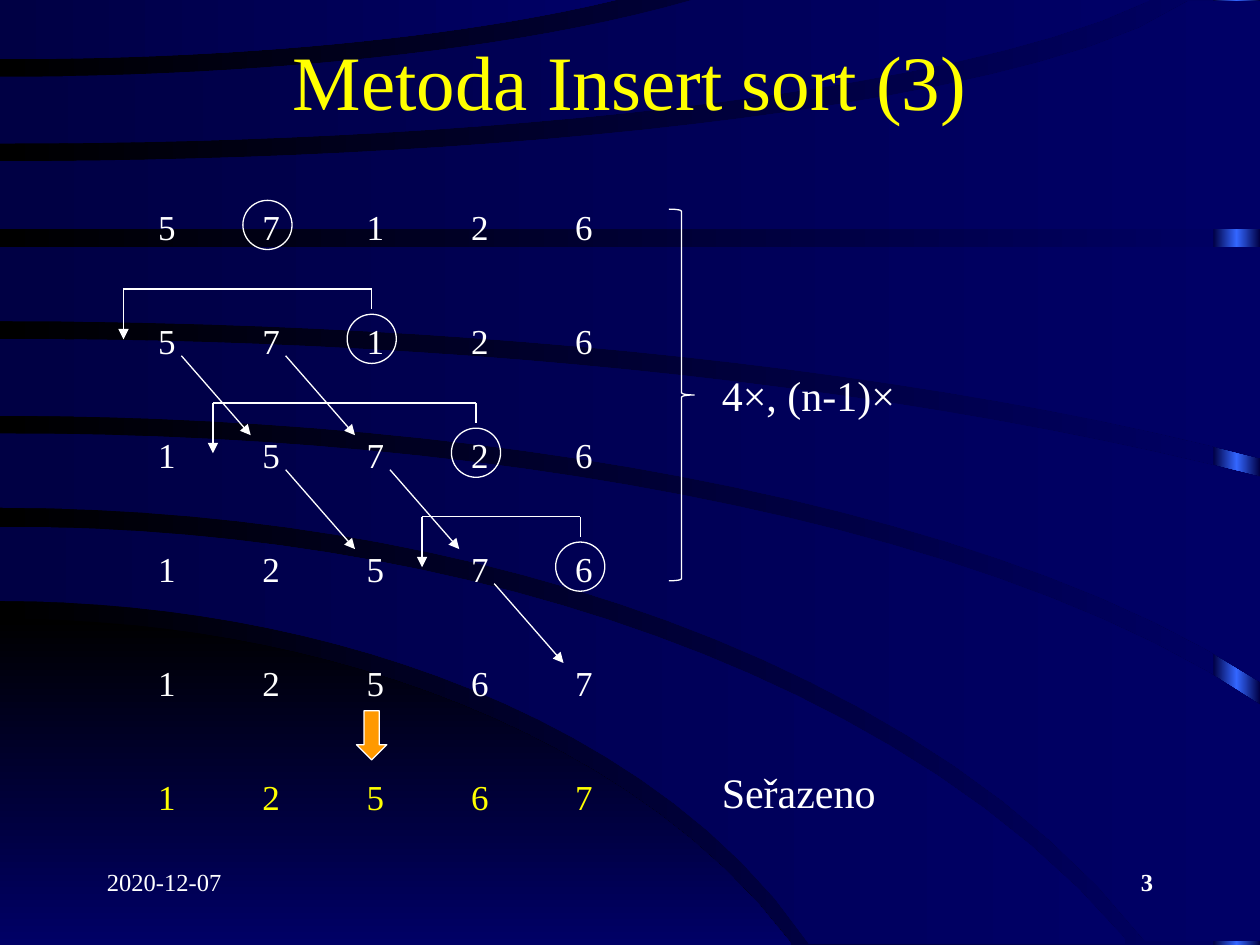
"""Build the slide that traces insert sort on five numbers."""
from copy import deepcopy
from dataclasses import dataclass
from math import sqrt

from lxml.etree import SubElement
from pptx import Presentation
from pptx.dml.color import RGBColor
from pptx.enum.shapes import MSO_CONNECTOR, MSO_SHAPE
from pptx.enum.text import MSO_ANCHOR, PP_ALIGN
from pptx.oxml.ns import qn
from pptx.util import Inches, Pt


@dataclass(frozen=True)
class Theme:
    font: str = "Times New Roman"
    black: str = "000000"
    navy: str = "000044"
    blue: str = "000066"
    bright: str = "3366FF"
    white: str = "FFFFFF"
    yellow: str = "FFFF00"
    orange: str = "FF9900"
    title: int = 44
    label: int = 24
    digit: int = 20
    footer: int = 14
    stroke: float = 0.75


theme = Theme()


def write_text(shape, text, size, color=theme.white, align=PP_ALIGN.LEFT,
               anchor=MSO_ANCHOR.MIDDLE, bold=False, wrap=True):
    frame = shape.text_frame
    frame.word_wrap = wrap
    frame.vertical_anchor = anchor
    para = frame.paragraphs[0]
    para.alignment = align
    span = para.add_run()
    span.text = text
    span.font.name = theme.font
    span.font.size = Pt(size)
    span.font.bold = bold
    span.font.color.rgb = RGBColor.from_string(color)


def color_stops(fill, angle, *colors):
    fill.gradient_angle = angle
    for index, (stop, color) in enumerate(zip(fill.gradient_stops, colors)):
        stop.position = index / (len(colors) - 1)
        stop.color.rgb = RGBColor.from_string(color)


deck = Presentation()
deck.slide_width, deck.slide_height = Inches(10), Inches(7.5)
page = deck.slides.add_slide(deck.slide_layouts[5])
shapes = page.shapes
page.background.fill.gradient()
color_stops(page.background.fill, 0, theme.black, theme.blue)

strip = shapes.add_shape(MSO_SHAPE.RECTANGLE, Inches(9.63), 0, Inches(0.37), Inches(7.5))
strip.shadow.inherit = False
strip.line.fill.background()
strip.fill.gradient()
stop_list = strip._element.spPr.find(qn("a:gradFill")).find(qn("a:gsLst"))
stop_list.insert(1, deepcopy(stop_list[0]))
color_stops(strip.fill, 0, theme.navy, theme.bright, theme.navy)

hill = ((4.91, 7, 4.62, 6.28), (7.5, 7, 0, 6.28))
bands = [
    ((4.18, 10, 5.95, 8.93), (4.77, 7, 4.52, 6.42)),
    ((3.44, 11.2, 3.92, 10), (4.03, 10, 5.9, 9.09)),
    ((2.69, 15, 4.3, 10), (3.3, 11.3, 3.95, 10)),
    ((1.96, 14, 0, 10), (2.55, 14, 3.62, 10)),
    ((1.28, 9.7, -1.66, 9.43), (1.82, 14, 0, 10)),
    ((0.61, 7, -1.6, 5.5), (1.14, 9.7, -1.72, 9.12)),
    ((0, 6.5, 0, 4.9), (0.47, 6.5, -1.38, 4.9)),
]
samples = 24
for edges in [hill, *bands]:
    upper, lower = [
        [(end * step / samples,
          start + rise * (1 - sqrt(1 - (end * step / samples / radius) ** 2)))
         for step in range(samples + 1)]
        for start, radius, rise, end in edges]
    shorter, longer = sorted([upper[-1], lower[-1]])
    outline = [*upper, (longer[0], shorter[1]), *reversed(lower)]
    points = [(Inches(x), Inches(y)) for x, y in outline]
    builder = shapes.build_freeform(*points[0])
    builder.add_line_segments(points[1:], close=True)
    band = builder.convert_to_shape()
    band.shadow.inherit = False
    band.line.fill.background()
    band.fill.gradient()
    if edges is hill:
        color_stops(band.fill, 270, theme.black, theme.blue)
    else:
        color_stops(band.fill, 0, theme.navy, theme.blue)

title = shapes.title
shapes._spTree.append(title._element)
title.left, title.top, title.width, title.height = (
    Inches(0.75), Inches(0.17), Inches(8.5), Inches(0.92))
write_text(title, "Metoda Insert sort (3)", theme.title, color=theme.yellow,
           align=PP_ALIGN.CENTER)

footer = dict(size=theme.footer, anchor=MSO_ANCHOR.TOP)
label = dict(size=theme.label)
for left, top, width, height, text, style in [
    (0.75, 6.83, 2.08, 0.5, "2020-12-07", footer),
    (7.17, 6.83, 2.08, 0.5, "3", dict(footer, align=PP_ALIGN.RIGHT, bold=True)),
    (5.63, 2.92, 1.65, 0.43, "4×, (n-1)×", label),
    (5.63, 6.07, 1.65, 0.43, "Seřazeno", label),
]:
    box = shapes.add_textbox(Inches(left), Inches(top), Inches(width), Inches(height))
    write_text(box, text, **style)

cell_size = 0.39
column_lefts = [1.1 + column * (4.41 - 1.1) / 4 for column in range(5)]
row_tops = [1.59 + row * (6.11 - 1.59) / 5 for row in range(6)]
steps = [("57126", 1), ("57126", 2), ("15726", 3), ("12576", 4), ("12567", None),
         ("12567", None)]
for row, (top, (digits, key_column)) in enumerate(zip(row_tops, steps)):
    for column, (left, digit) in enumerate(zip(column_lefts, digits)):
        cell = shapes.add_shape(MSO_SHAPE.OVAL, Inches(left), Inches(top),
                                Inches(cell_size), Inches(cell_size))
        cell.shadow.inherit = False
        cell.fill.background()
        if column == key_column:
            cell.line.color.rgb = RGBColor.from_string(theme.white)
            cell.line.width = Pt(theme.stroke)
        else:
            cell.line.fill.background()
        frame = cell.text_frame
        frame.margin_left, frame.margin_top = Inches(0.06), Inches(0.03)
        frame.margin_right = frame.margin_bottom = 0
        write_text(cell, digit, theme.digit, align=PP_ALIGN.CENTER, wrap=False,
                   color=theme.yellow if row == len(steps) - 1 else theme.white)

for preset, left, top, width, height, bend in [
    (MSO_SHAPE.DOWN_ARROW, 2.83, 5.64, 0.24, 0.39, 0.5),
    (MSO_SHAPE.RIGHT_BRACE, 5.31, 1.66, 0.2, 2.95, 0.08),
]:
    mark = shapes.add_shape(preset, Inches(left), Inches(top), Inches(width), Inches(height))
    mark.shadow.inherit = False
    mark.line.color.rgb = RGBColor.from_string(theme.white)
    mark.line.width = Pt(theme.stroke)
    mark.adjustments[0] = bend
    if preset == MSO_SHAPE.DOWN_ARROW:
        mark.fill.solid()
        mark.fill.fore_color.rgb = RGBColor.from_string(theme.orange)
    else:
        mark.fill.background()

lines = []
for row, insert_x in [(1, 0.98), (2, 1.69), (3, 3.35)]:
    top = row_tops[row]
    key_x = column_lefts[steps[row][1]] + cell_size / 2
    lines += [(key_x, top - 0.2, key_x, top - 0.04, False),
              (insert_x, top - 0.2, insert_x, top + 0.2, True),
              (insert_x, top - 0.2, key_x, top - 0.2, False)]
for row, column in [(1, 0), (1, 1), (2, 1), (2, 2), (3, 3)]:
    left, top = column_lefts[column], row_tops[row]
    lines.append((left + 0.34, top + 0.33, left + 0.89, top + 0.96, True))

for x1, y1, x2, y2, has_arrow in lines:
    line = shapes.add_connector(MSO_CONNECTOR.STRAIGHT, Inches(x1), Inches(y1),
                                Inches(x2), Inches(y2))
    line.line.color.rgb = RGBColor.from_string(theme.white)
    line.line.width = Pt(theme.stroke)
    if has_arrow:
        SubElement(line.line._get_or_add_ln(), qn("a:tailEnd"), type="triangle")
    SubElement(line._element.spPr, qn("a:effectLst"))

deck.save("out.pptx")
